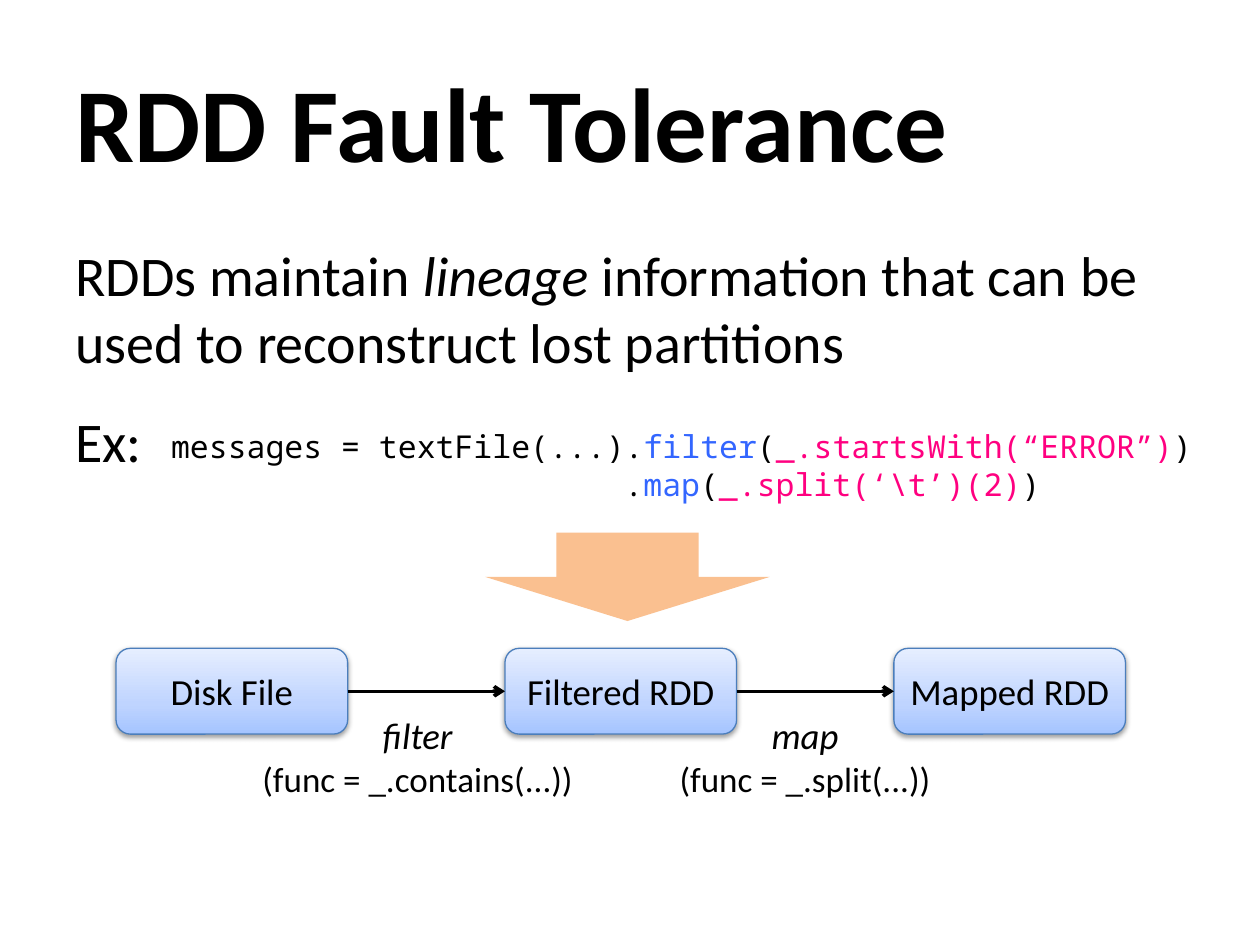
from dataclasses import dataclass

from lxml.etree import SubElement
from pptx import Presentation
from pptx.dml.color import RGBColor
from pptx.enum.shapes import MSO_CONNECTOR, MSO_SHAPE
from pptx.enum.text import MSO_ANCHOR, PP_ALIGN
from pptx.oxml.ns import qn
from pptx.util import Cm, Pt


@dataclass(frozen=True)
class Theme:
    font: str = "Calibri"
    code_font: str = "Noto Sans Mono"
    ink: str = "000000"
    method: str = "3366FF"
    argument: str = "FF0080"
    arrow: str = "FAC090"
    border: str = "4B7EBC"
    gradient: tuple = ((0, "A4C4FF"), (35, "BFD4FF"), (100, "E6EEFF"))
    title_size: int = 60
    body_size: int = 32
    stage_size: int = 21
    detail_size: int = 20
    code_size: int = 18


@dataclass(frozen=True)
class Span:
    text: str
    color: str
    italic: bool = False


@dataclass(frozen=True)
class Step:
    name: str
    function: str
    left: float
    width: float


THEME = Theme()

# Lengths in centimetres
STAGE_LEFT, STAGE_TOP, STAGE_PITCH = 2.34, 13.07, 7.84
STAGE_WIDTH, STAGE_HEIGHT = 4.67, 1.73
CODE_INDENT = 9.14  # lines the second call up under the first dot

STAGES = ["Disk File", "Filtered RDD", "Mapped RDD"]
STEPS = [
    Step("filter", "(func = _.contains(...))", 4.98, 6.88),
    Step("map", "(func = _.split(...))", 13.41, 5.64),
]
BODY = [
    [
        Span("RDDs maintain ", THEME.ink),
        Span("lineage", THEME.ink, italic=True),
        Span(" information that can be used to reconstruct lost partitions", THEME.ink),
    ],
    [Span("Ex:", THEME.ink)],
]
CODE = [
    [
        Span("messages = textFile(...).", THEME.ink),
        Span("filter", THEME.method),
        Span("(", THEME.ink),
        Span("_.startsWith(“ERROR”)", THEME.argument),
        Span(")", THEME.ink),
    ],
    [
        Span(".", THEME.ink),
        Span("map", THEME.method),
        Span("(", THEME.ink),
        Span("_.split(‘\\t’)(2)", THEME.argument),
        Span(")", THEME.ink),
    ],
]


def style_run(run, size: int, color: str = THEME.ink, font: str = THEME.font,
              italic: bool = False, bold: bool = False) -> None:
    run.font.name = font
    run.font.size = Pt(size)
    run.font.italic = italic
    run.font.bold = bold
    run.font.color.rgb = RGBColor.from_string(color)


def add_text(slide, left: float, top: float, width: float, height: float, wrap: bool = True):
    frame = slide.shapes.add_textbox(Cm(left), Cm(top), Cm(width), Cm(height)).text_frame
    frame.word_wrap = wrap
    return frame


def write_lines(frame, lines: list[list[Span]], size: int, font: str) -> None:
    for index, spans in enumerate(lines):
        paragraph = frame.paragraphs[0] if index == 0 else frame.add_paragraph()
        for span in spans:
            run = paragraph.add_run()
            run.text = span.text
            style_run(run, size, span.color, font, span.italic)


def fill_gradient(shape) -> None:
    shape.fill.gradient()
    shape.fill.gradient_angle = 90
    stops = shape._element.spPr.find(qn("a:gradFill")).find(qn("a:gsLst"))
    for stop in list(stops):
        stops.remove(stop)
    for position, color in THEME.gradient:
        stop = SubElement(stops, qn("a:gs"), pos=str(position * 1000))
        SubElement(stop, qn("a:srgbClr"), val=color)


def add_soft_shadow(shape) -> None:
    shape.shadow.inherit = False
    effects = shape._element.spPr.find(qn("a:effectLst"))
    shadow = SubElement(effects, qn("a:outerShdw"), blurRad=str(Pt(3.1)),
                        dist=str(Pt(1.6)), dir="5400000", rotWithShape="0")
    color = SubElement(shadow, qn("a:srgbClr"), val="000000")
    SubElement(color, qn("a:alpha"), val="38000")


def add_stage(slide, label: str, left: float):
    stage = slide.shapes.add_shape(MSO_SHAPE.ROUNDED_RECTANGLE, Cm(left), Cm(STAGE_TOP),
                                   Cm(STAGE_WIDTH), Cm(STAGE_HEIGHT))
    fill_gradient(stage)
    stage.line.color.rgb = RGBColor.from_string(THEME.border)
    stage.line.width = Pt(0.75)
    add_soft_shadow(stage)
    frame = stage.text_frame
    frame.margin_left = frame.margin_right = 0
    frame.vertical_anchor = MSO_ANCHOR.MIDDLE
    frame.text = label
    frame.paragraphs[0].alignment = PP_ALIGN.CENTER
    style_run(frame.paragraphs[0].runs[0], THEME.stage_size)
    return stage


def link_stages(slide, source, target) -> None:
    link = slide.shapes.add_connector(MSO_CONNECTOR.STRAIGHT, 0, 0, 0, 0)
    link.begin_connect(source, 3)
    link.end_connect(target, 1)
    link.line.color.rgb = RGBColor.from_string(THEME.ink)
    link.line.width = Pt(2)
    SubElement(link.line._get_or_add_ln(), qn("a:tailEnd"), type="arrow")
    SubElement(link._element.spPr, qn("a:effectLst"))


def add_step(slide, step: Step) -> None:
    frame = add_text(slide, step.left, 14.25, step.width, 2.01, wrap=False)
    caption = frame.paragraphs[0]
    caption.text = f"{step.name}\v{step.function}"
    caption.alignment = PP_ALIGN.CENTER
    name, function = caption.runs
    style_run(name, THEME.stage_size, italic=True)
    style_run(function, THEME.detail_size)


def main() -> None:
    prs = Presentation()
    prs.slide_width, prs.slide_height = Cm(25.4), Cm(19.05)
    slide = prs.slides.add_slide(prs.slide_layouts[5])

    # Title
    title = slide.shapes.title
    title.left, title.top, title.width, title.height = Cm(1.27), Cm(0.84), Cm(22.86), Cm(3.18)
    title.text_frame.text = "RDD Fault Tolerance"
    title.text_frame.vertical_anchor = MSO_ANCHOR.MIDDLE
    heading = title.text_frame.paragraphs[0]
    heading.alignment = PP_ALIGN.LEFT
    style_run(heading.runs[0], THEME.title_size, bold=True)

    # Explanation
    body = add_text(slide, 1.27, 4.72, 23.06, 11.58)
    write_lines(body, BODY, THEME.body_size, THEME.font)
    for paragraph in body.paragraphs:
        paragraph.space_before = Pt(18)

    # Code example
    code = add_text(slide, 3.2, 8.48, 21.51, 1.8)
    write_lines(code, CODE, THEME.code_size, THEME.code_font)
    code.paragraphs[1]._p.get_or_add_pPr().set("marL", str(Cm(CODE_INDENT)))

    # Lineage chain
    stages = [add_stage(slide, label, STAGE_LEFT + index * STAGE_PITCH)
              for index, label in enumerate(STAGES)]
    for source, target in zip(stages, stages[1:]):
        link_stages(slide, source, target)

    # Arrow from the code to the chain
    arrow = slide.shapes.add_shape(MSO_SHAPE.DOWN_ARROW, Cm(9.78), Cm(10.74), Cm(5.74), Cm(1.78))
    arrow.fill.solid()
    arrow.fill.fore_color.rgb = RGBColor.from_string(THEME.arrow)
    arrow.line.fill.background()
    arrow.shadow.inherit = False

    # Captions of the transformations
    for step in STEPS:
        add_step(slide, step)

    prs.save("out.pptx")


if __name__ == "__main__":
    main()
